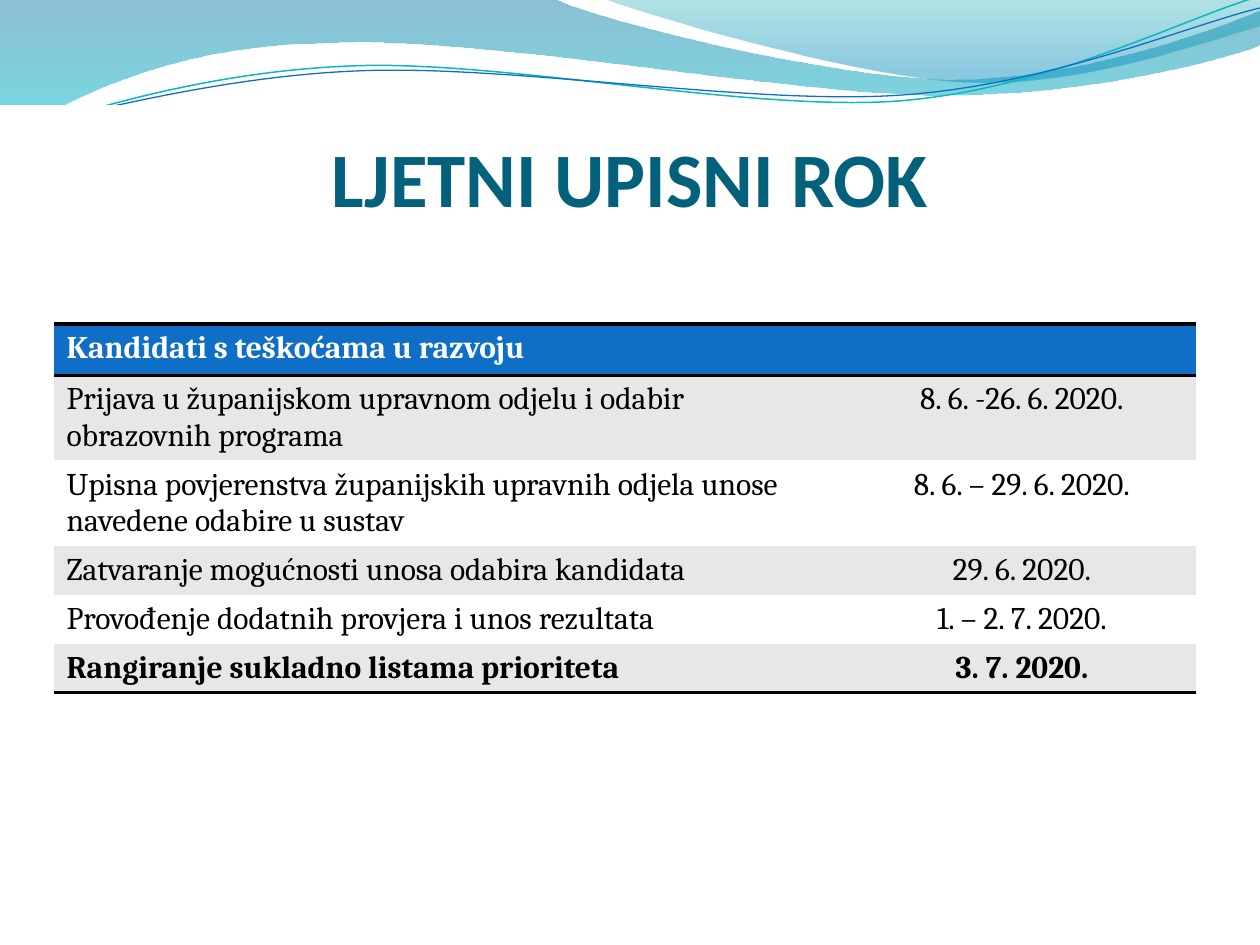
from lxml.etree import SubElement
from pptx import Presentation
from pptx.dml.color import RGBColor
from pptx.enum.shapes import MSO_SHAPE as SHAPE
from pptx.enum.text import MSO_ANCHOR as ANCHOR, PP_ALIGN as ALIGN
from pptx.oxml.ns import qn
from pptx.util import Pt

PX = 914400 / 126
WIDTH, HEIGHT = 1260, 945
PLAIN_TABLE = "{2D5ABB26-0587-4C30-8999-92F81FD0307C}"

COLORS = {
    "white": "FFFFFF", "black": "000000", "title": "04617B",
    "header": "0F6FC6", "band": "E7E7E7", "teal": "0AB8BF",
    "wave_top": "0074A1", "wave_bottom": "00C6CF",
    "crest_top": "00A1A9", "crest_bottom": "008BBF",
}

WAVE = [(0, 0), (554, -1), (600, 21, 837, 79, 955, 79),
        (1075, 79, 1207, 33, 1260, 11), (1261, 45),
        (1239, 55, 1096, 96, 940, 95), (784, 95, 481, 35, 324, 43),
        (163, 45, 58, 105, -1, 142), (0, 0)]
CREST = [(604, -1), (641, 14, 859, 78, 969, 82),
         (1079, 87, 1211, 40, 1260, 26), (1260, 0), (604, -1)]
TEAL_LINE = [(0, 140), (60, 117, 199, 72, 349, 66),
             (498, 59, 747, 112, 898, 101), (1050, 89, 1182, 19, 1257, -3)]
BLUE_LINE = [(0, 131), (59, 121, 207, 77, 357, 71),
             (508, 64, 752, 106, 903, 95), (1053, 84, 1186, 26, 1260, 8)]

ROWS = [
    ("Kandidati s teškoćama u razvoju", ""),
    ("Prijava u županijskom upravnom odjelu i odabir obrazovnih programa",
     "8. 6. -26. 6. 2020."),
    ("Upisna povjerenstva županijskih upravnih odjela unose navedene odabire u sustav",
     "8. 6. – 29. 6. 2020."),
    ("Zatvaranje mogućnosti unosa odabira kandidata", "29. 6. 2020."),
    ("Provođenje dodatnih provjera i unos rezultata", "1. – 2. 7. 2020."),
    ("Rangiranje sukladno listama prioriteta", "3. 7. 2020."),
]


def emu(px):
    return round(px * PX)


def rgb(name):
    return RGBColor.from_string(COLORS[name])


def write(tf, text, font="Cambria", size=18, color="black", bold=False, align=ALIGN.LEFT):
    p = tf.paragraphs[0]
    p.alignment = align
    r = p.add_run()
    r.text = text
    r.font.name = font
    r.font.size = Pt(size)
    r.font.bold = bold
    r.font.color.rgb = rgb(color)


class Deck:
    def __init__(self):
        self.prs = Presentation()
        self.prs.slide_width, self.prs.slide_height = emu(WIDTH), emu(HEIGHT)
        self.slide = self.prs.slides.add_slide(self.prs.slide_layouts[6])

    def outline(self, segments, close):
        points = [(emu(x), emu(y)) for seg in segments for x, y in zip(seg[::2], seg[1::2])]
        fb = self.slide.shapes.build_freeform(*points[0])
        fb.add_line_segments(points[1:], close=close)
        sp = fb.convert_to_shape()
        sp.shadow.inherit = False
        lines = iter(list(sp._element.spPr.iter(qn("a:lnTo"))))
        for seg in segments[1:]:
            line = next(lines)
            if len(seg) == 6:
                line.tag = qn("a:cubicBezTo")
                for _ in range(2):
                    extra = next(lines)
                    line.append(extra[0])
                    extra.getparent().remove(extra)
        return sp

    def wave(self, segments, stops):
        sp = self.outline(segments, True)
        sp.line.fill.background()
        sp.fill.gradient()
        sp.fill.gradient_angle = 270
        for stop, (position, color, _) in zip(sp.fill.gradient_stops, stops):
            stop.position = position
            stop.color.rgb = rgb(color)
        for clr, (_, _, opacity) in zip(sp._element.spPr.iter(qn("a:srgbClr")), stops):
            SubElement(clr, qn("a:alpha"), val=str(opacity * 1000))

    def curve(self, segments, color, width):
        sp = self.outline(segments, False)
        sp.fill.background()
        sp.line.color.rgb = rgb(color)
        sp.line.width = Pt(width)

    def title(self, text, x, y, w, h):
        sp = self.slide.shapes.add_shape(SHAPE.RECTANGLE, emu(x), emu(y), emu(w), emu(h))
        sp.shadow.inherit = False
        sp.fill.solid()
        sp.fill.fore_color.rgb = rgb("white")
        sp.line.fill.background()
        tf = sp.text_frame
        tf.word_wrap = True
        tf.vertical_anchor = ANCHOR.BOTTOM
        tf.margin_left = tf.margin_right = tf.margin_bottom = 0
        tf.margin_top = emu(6)
        write(tf, text, font="Calibri", size=44, color="title", bold=True, align=ALIGN.CENTER)

    def border(self, cell, side):
        ln = SubElement(cell._tc.get_or_add_tcPr(), qn(f"a:ln{side}"), w=str(Pt(2)))
        SubElement(SubElement(ln, qn("a:solidFill")), qn("a:srgbClr"), val=COLORS["black"])

    def table(self, rows, x, y, widths, heights, h):
        frame = self.slide.shapes.add_table(len(rows), len(widths), emu(x), emu(y),
                                            emu(sum(widths)), emu(h))
        table = frame.table
        frame._element.find(".//" + qn("a:tableStyleId")).text = PLAIN_TABLE
        for col, width in zip(table.columns, widths):
            col.width = emu(width)
        last = len(rows) - 1
        for i, (texts, height) in enumerate(zip(rows, heights)):
            table.rows[i].height = emu(height)
            fill = "header" if i == 0 else "band" if i % 2 else "white"
            sides = "TB" if i == 0 else "B" if i == last else ""
            for j, text in enumerate(texts):
                cell = table.cell(i, j)
                for side in sides:
                    self.border(cell, side)
                cell.fill.solid()
                cell.fill.fore_color.rgb = rgb(fill)
                if text:
                    write(cell.text_frame, text, color="black" if i else "white",
                          bold=i in (0, last), align=ALIGN.CENTER if j else ALIGN.LEFT)
        frame.height = emu(h)


def main():
    deck = Deck()
    deck.wave(WAVE, [(0, "wave_top", 45), (1, "wave_bottom", 55)])
    deck.wave(CREST, [(0, "crest_top", 30), (0.8, "crest_bottom", 45)])
    deck.curve(TEAL_LINE, "teal", 0.85)
    deck.curve(BLUE_LINE, "header", 0.75)
    deck.title("LJETNI UPISNI ROK", 0, 105, WIDTH, 118)
    deck.table(ROWS, 54, 324, [794, 348], [47, 47, 81, 47, 47, 47], 378)
    deck.prs.save("out.pptx")


if __name__ == "__main__":
    main()
